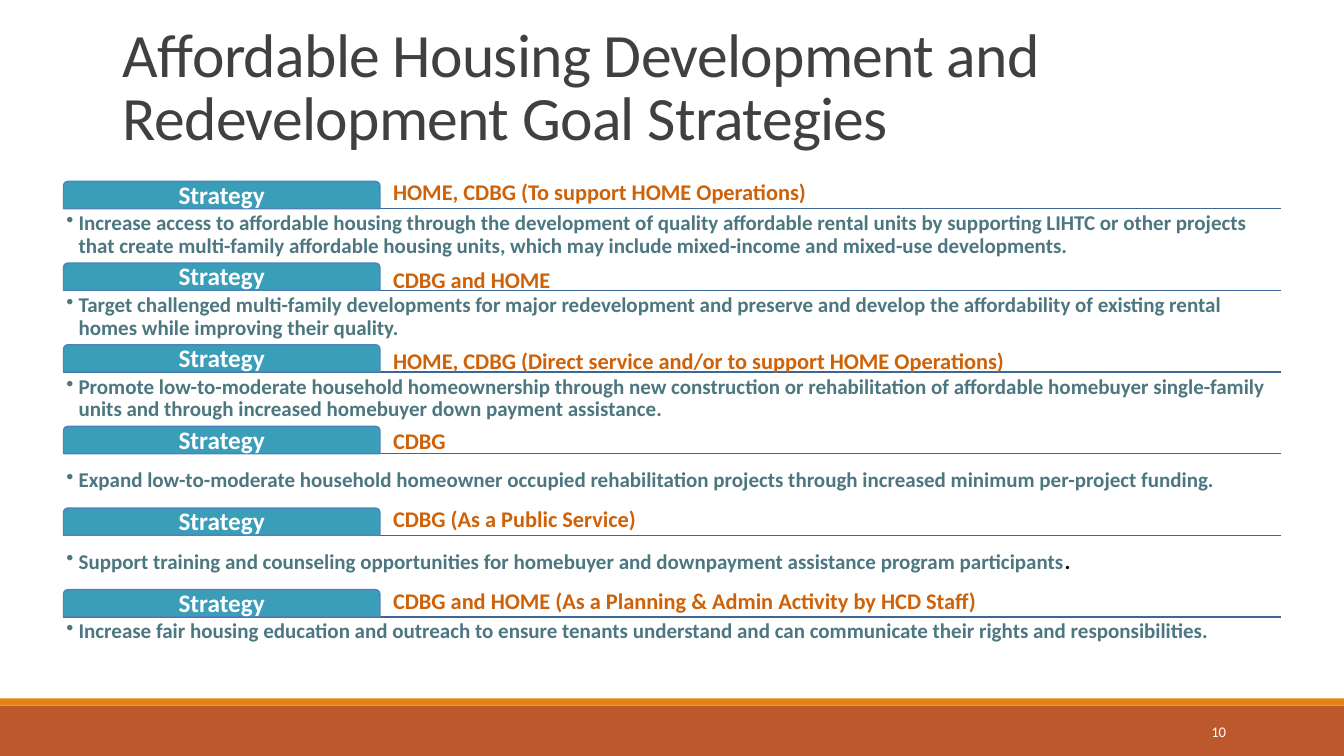
import dataclasses

import lxml.etree
import pptx
import pptx.dml.color
import pptx.enum.shapes
import pptx.enum.text
import pptx.oxml
import pptx.oxml.ns
import pptx.util

RGBColor = pptx.dml.color.RGBColor
Shapes = pptx.enum.shapes.MSO_SHAPE
Align = pptx.enum.text.PP_ALIGN
Anchor = pptx.enum.text.MSO_ANCHOR

WHITE = RGBColor(0xFF, 0xFF, 0xFF)
BLACK = RGBColor(0, 0, 0)
CHARCOAL = RGBColor(0x40, 0x40, 0x40)
TEAL = RGBColor(0x3A, 0x9E, 0xB9)
TAB_EDGE = RGBColor(0x4F, 0x81, 0xBD)
RULE_BLUE = RGBColor(0x3D, 0x66, 0x96)
FUNDING_ORANGE = RGBColor(0xCD, 0x62, 0x09)
DETAIL_SLATE = RGBColor(0x4C, 0x76, 0x80)
RUST = RGBColor(0xBD, 0x58, 0x2C)
AMBER = RGBColor(0xE4, 0x83, 0x12)

FONT = "Calibri"
COLUMNS, ROWS = 160, 90
SLIDE_WIDTH, SLIDE_HEIGHT = pptx.util.Inches(13.33), pptx.util.Inches(7.5)

LIST_LEFT, LIST_TOP, LIST_WIDTH = 7.56, 21.6, 145
PITCH = 9.72
TAB_WIDTH, TAB_HEIGHT = 37.68, 3.24
DETAIL_HEIGHT = 6.36
INSET = 0.36


@dataclasses.dataclass(frozen=True)
class Area:
    left: float
    top: float
    width: float
    height: float


@dataclasses.dataclass(frozen=True)
class Style:
    size: float
    color: RGBColor
    bold: bool = True


@dataclasses.dataclass(frozen=True)
class Strategy:
    funding: str
    detail: str
    drop: float = 0
    ending: str = ""
    anchor: Anchor = Anchor.MIDDLE


TITLE = Style(44, CHARCOAL, False)
TAB = Style(18, WHITE)
FUNDING = Style(16, FUNDING_ORANGE)
DETAIL = Style(15, DETAIL_SLATE)
ENDING = Style(16, BLACK)
NUMBER = Style(10.5, WHITE, False)

STRATEGIES = [
    Strategy("HOME, CDBG (To support HOME Operations)",
             "Increase access to affordable housing through the development of quality affordable "
             "rental units by supporting LIHTC or other projects that create multi-family affordable "
             "housing units, which may include mixed-income and mixed-use developments."),
    Strategy("CDBG and HOME",
             "Target challenged multi-family developments for major redevelopment and preserve and "
             "develop the affordability of existing rental homes while improving their quality.",
             drop=0.72),
    Strategy("HOME, CDBG (Direct service and/or to support HOME Operations)",
             "Promote low-to-moderate household homeownership through new construction or "
             "rehabilitation of affordable homebuyer single-family units and through increased "
             "homebuyer down payment assistance.", drop=0.6),
    Strategy("CDBG",
             "Expand low-to-moderate household homeowner occupied rehabilitation projects through "
             "increased minimum per-project funding.", drop=0.48),
    Strategy("CDBG (As a Public Service)",
             "Support training and counseling opportunities for homebuyer and downpayment "
             "assistance program participants", ending="."),
    Strategy("CDBG and HOME (As a Planning & Admin Activity by HCD Staff)",
             "Increase fair housing education and outreach to ensure tenants understand and can "
             "communicate their rights and responsibilities.", anchor=Anchor.TOP),
]


def across(columns: float) -> int:
    return round(SLIDE_WIDTH * columns / COLUMNS)


def down(rows: float) -> int:
    return round(SLIDE_HEIGHT * rows / ROWS)


def place(area: Area) -> tuple[int, int, int, int]:
    return across(area.left), down(area.top), across(area.width), down(area.height)


def add_panel(page, kind: Shapes, area: Area, fill: RGBColor):
    panel = page.shapes.add_shape(kind, *place(area))
    panel.shadow.inherit = False
    panel.fill.solid()
    panel.fill.fore_color.rgb = fill
    panel.line.fill.background()
    return panel


def set_frame(box, anchor: Anchor, left: float, top: float, right: float, bottom: float):
    frame = box.text_frame
    frame.word_wrap = True
    frame.auto_size = pptx.enum.text.MSO_AUTO_SIZE.NONE
    frame.vertical_anchor = anchor
    frame.margin_left, frame.margin_right = across(left), across(right)
    frame.margin_top, frame.margin_bottom = down(top), down(bottom)
    return frame.paragraphs[0]


def set_spacing(para, lines: float, after: float) -> None:
    para.line_spacing = lines
    para.space_before = pptx.util.Pt(0)
    para.space_after = pptx.util.Pt(after)


def add_span(para, text: str, style: Style):
    span = para.add_run()
    span.text = text
    span.font.name = FONT
    span.font.size = pptx.util.Pt(style.size)
    span.font.bold = style.bold
    span.font.color.rgb = style.color
    return span


def add_bullet(para) -> None:
    para.level = 1
    properties = para._p.get_or_add_pPr()
    properties.set("marL", str(across(1.44)))
    properties.set("indent", str(-across(1.44)))
    bullet = lxml.etree.SubElement(properties, pptx.oxml.ns.qn("a:buChar"))
    bullet.set("char", "•")


def add_rule(page, row: float) -> None:
    rule = page.shapes.add_connector(
        pptx.enum.shapes.MSO_CONNECTOR.STRAIGHT,
        across(LIST_LEFT), down(row), across(LIST_LEFT + LIST_WIDTH), down(row))
    rule.line.color.rgb = RULE_BLUE
    rule.line.width = pptx.util.Pt(1)
    lxml.etree.SubElement(rule._element.spPr, pptx.oxml.ns.qn("a:effectLst"))


def add_strategy(page, strategy: Strategy, top: float) -> None:
    base = top + TAB_HEIGHT
    add_rule(page, base)

    funding = page.shapes.add_textbox(*place(Area(
        LIST_LEFT + TAB_WIDTH, top + strategy.drop, LIST_WIDTH - TAB_WIDTH, TAB_HEIGHT)))
    para = set_frame(funding, Anchor.BOTTOM, 1.56, INSET, INSET, INSET)
    set_spacing(para, 0.9, 7)
    add_span(para, strategy.funding, FUNDING)

    tab = add_panel(page, Shapes.ROUND_2_SAME_RECTANGLE,
                    Area(LIST_LEFT, top, TAB_WIDTH, TAB_HEIGHT), TEAL)
    tab.line.color.rgb = TAB_EDGE
    tab.line.width = pptx.util.Pt(1)
    para = set_frame(tab, Anchor.MIDDLE, 0.6, 0.6, 0.6, 0.48)
    para.alignment = Align.CENTER
    set_spacing(para, 0.9, 8)
    add_span(para, "Strategy", TAB)

    detail = page.shapes.add_textbox(*place(Area(LIST_LEFT, base, LIST_WIDTH, DETAIL_HEIGHT)))
    para = set_frame(detail, strategy.anchor, INSET, INSET, INSET, INSET)
    set_spacing(para, 0.9, 3)
    add_bullet(para)
    add_span(para, strategy.detail, DETAIL)
    if strategy.ending:
        add_span(para, strategy.ending, ENDING)


def add_title(page) -> None:
    title = page.shapes.title
    title.left, title.top, title.width, title.height = place(Area(13.44, 2.52, 119.64, 16.44))
    para = set_frame(title, Anchor.MIDDLE, 1.2, 0.6, 1.2, 0.6)
    para.alignment = Align.LEFT
    set_spacing(para, 0.85, 0)
    span = add_span(para, "Affordable Housing Development and Redevelopment Goal Strategies", TITLE)
    span.font._element.set("spc", "-50")


def add_footer(page) -> None:
    add_panel(page, Shapes.RECTANGLE, Area(0, 84, COLUMNS, 6), RUST)
    add_panel(page, Shapes.RECTANGLE, Area(0, 83.16, COLUMNS, 0.84), AMBER)
    number = page.shapes.add_textbox(*place(Area(130, 84.72, 17.16, 4.8)))
    para = set_frame(number, Anchor.MIDDLE, 1.2, 0.6, 1.2, 0.6)
    para.alignment = Align.RIGHT
    add_span(para, "10", NUMBER)


def main() -> None:
    deck = pptx.Presentation()
    deck.slide_width, deck.slide_height = SLIDE_WIDTH, SLIDE_HEIGHT
    page = deck.slides.add_slide(deck.slide_layouts.get_by_name("Title Only"))
    add_footer(page)
    for index, strategy in enumerate(STRATEGIES):
        add_strategy(page, strategy, LIST_TOP + index * PITCH)
    add_title(page)
    deck.save("out.pptx")


if __name__ == "__main__":
    main()
